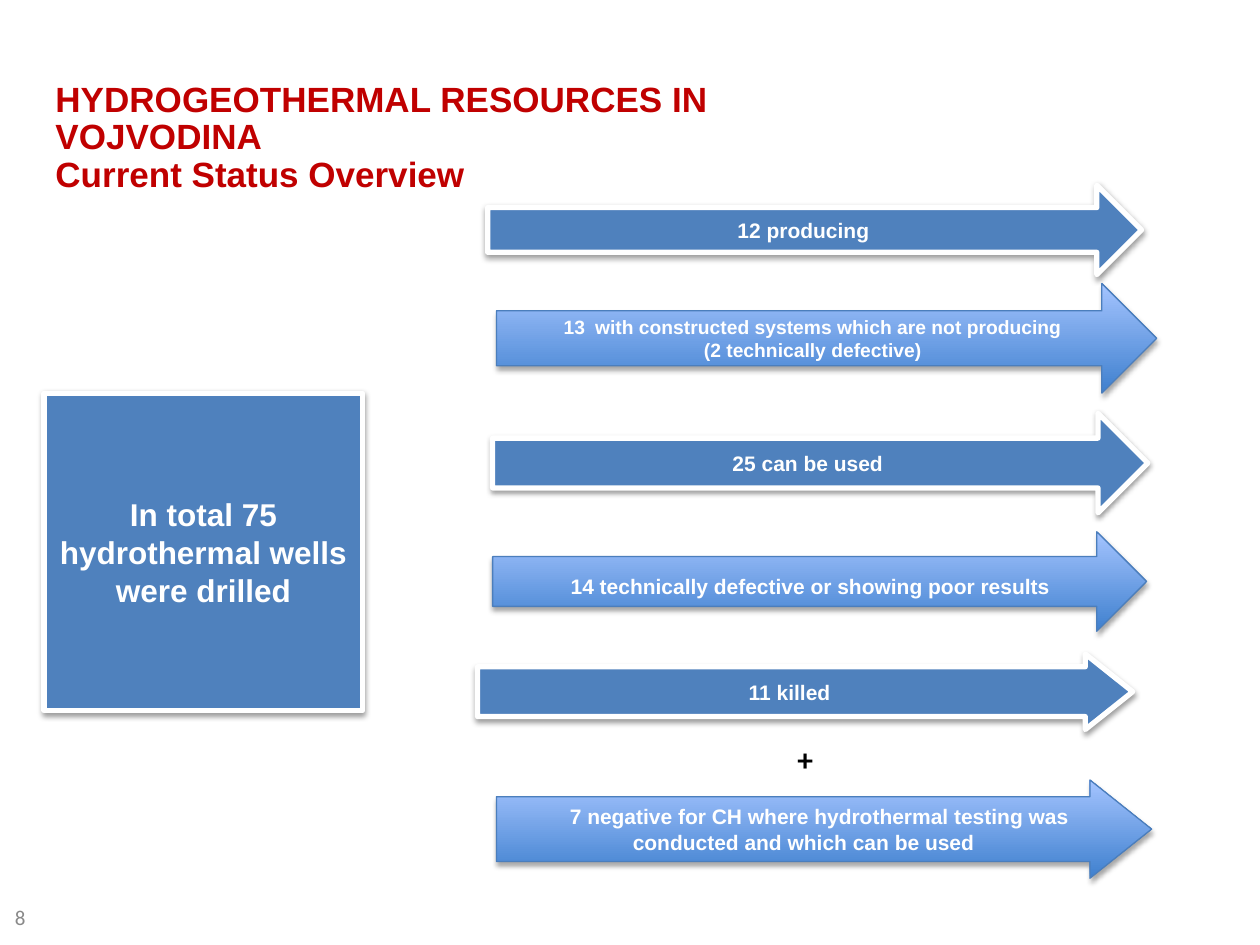
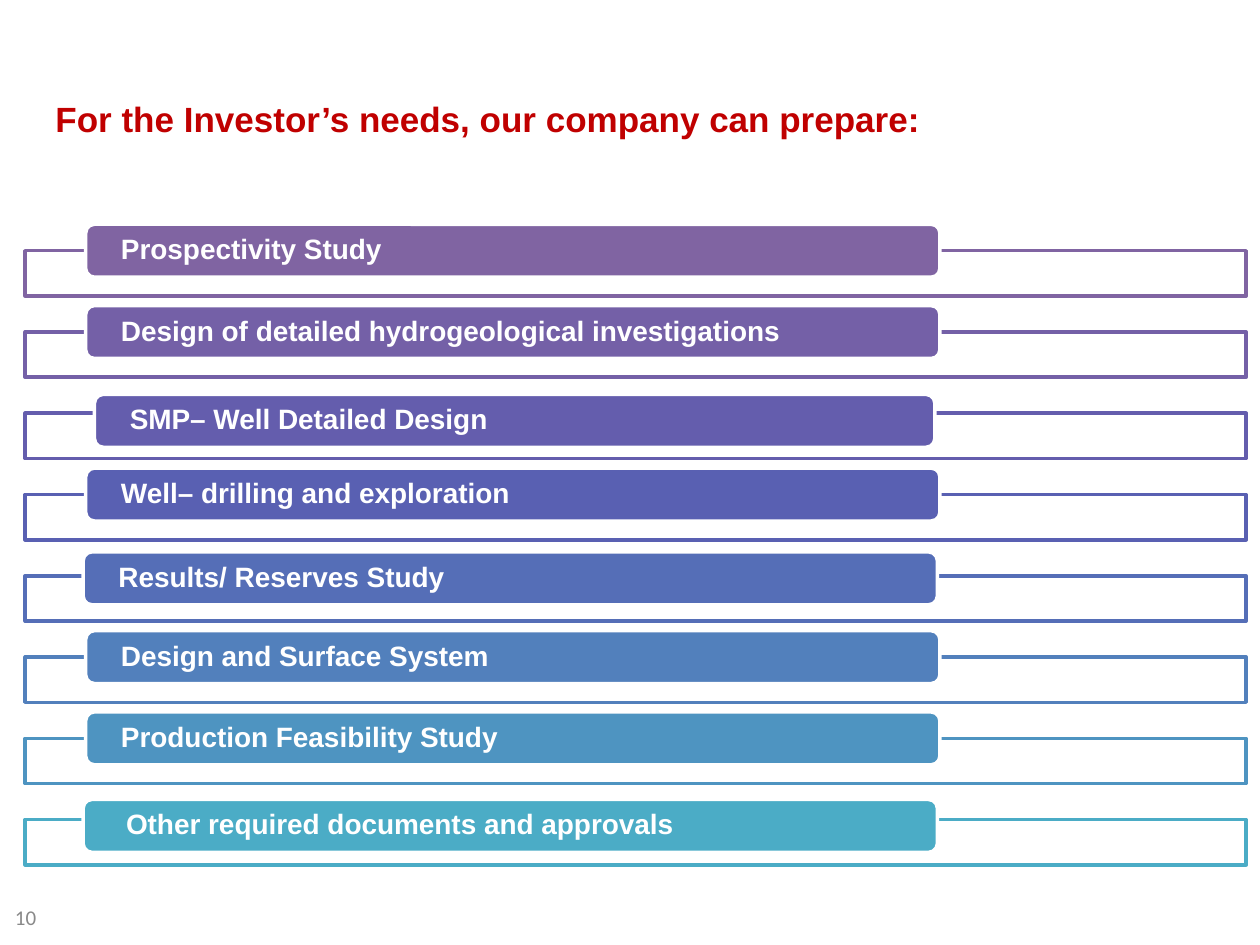
"""Two slides on hydrothermal wells in Vojvodina and the services on offer."""
from copy import deepcopy
from dataclasses import dataclass

from lxml import etree
from pptx import Presentation
from pptx.dml.color import RGBColor
from pptx.enum.shapes import MSO_SHAPE
from pptx.enum.text import MSO_ANCHOR, MSO_AUTO_SIZE, PP_ALIGN
from pptx.oxml.ns import qn
from pptx.util import Inches, Pt

RECT, ROUND, ARROW = MSO_SHAPE.RECTANGLE, MSO_SHAPE.ROUNDED_RECTANGLE, MSO_SHAPE.RIGHT_ARROW
TOP, MIDDLE = MSO_ANCHOR.TOP, MSO_ANCHOR.MIDDLE
LEFT, CENTER = PP_ALIGN.LEFT, PP_ALIGN.CENTER


@dataclass(frozen=True)
class Theme:
    """Colours, fonts and type sizes of both slides."""
    title: str = "C00000"
    white: str = "FFFFFF"
    black: str = "000000"
    number: str = "898989"
    blue: str = "4F81BD"
    edge: str = "4B7EBC"
    gradient: tuple = ("3F80CE", "A4C4FF")
    font: str = "Arial"
    alt_font: str = "Calibri"
    title_size: int = 20
    large: int = 18
    bar_size: int = 16
    small: int = 12
    tiny: int = 11


T = Theme()

WELLS_TITLE = "HYDROGEOTHERMAL RESOURCES IN VOJVODINA\nCurrent Status Overview"
TOTAL = "In total 75 hydrothermal wells were drilled"
POINTED = (0.658, 0.627)
WELL_GROUPS = [
    dict(text="12 producing", at=(3.87, 1.47, 5.19, 0.71)),
    dict(text=["with constructed systems which are not producing", "(2 technically defective)"],
         at=(3.94, 2.25, 5.24, 0.87), size=T.tiny, start=13),
    dict(text="25 can be used", at=(3.91, 3.28, 5.2, 0.79)),
    dict(text="14 technically defective or showing poor results",
         at=(3.91, 4.22, 5.19, 0.79), margins=(0.15, 0.13, 0.1, 0.05)),
    dict(text="11 killed", at=(3.79, 5.19, 5.2, 0.6), adj=POINTED),
    dict(text="7 negative for CH where hydrothermal testing was conducted and which can be used",
         at=(3.94, 6.19, 5.2, 0.78), adj=POINTED, indent=0.25),
]

SERVICES_TITLE = "For the Investor’s needs, our company can prepare:"
SERVICES = [
    dict(text="Prospectivity Study", color="8064A2"),
    dict(text="Design of detailed hydrogeological investigations", color="7460A7"),
    dict(text="SMP– Well Detailed Design", color="645DAD", left=0.75, width=6.67, rise=0.15),
    dict(text="Well– drilling and exploration", color="5960B2"),
    dict(text="Results/ Reserves Study", color="556EB7", left=0.66, rise=0.19),
    dict(text="Design and Surface System", color="5280BC"),
    dict(text="Production Feasibility Study", color="4E94C1"),
    dict(text="Other required documents and approvals", color="4BACC6",
         left=0.66, rise=0.16, indent=0.06),
]
FRAME_TOP, FRAME_STEP = 1.99, 0.645


def write(shape, text, size=T.small, color=T.white, font=T.font, bold=True, align=CENTER,
          anchor=MIDDLE, margins=(0.1, 0.05, 0.1, 0.05), spacing=None, indent=0, start=None):
    """Fill a shape with formatted paragraphs; start numbers the first one."""
    tf = shape.text_frame
    tf.word_wrap = True
    tf.auto_size = MSO_AUTO_SIZE.NONE
    tf.vertical_anchor = anchor
    tf.margin_left, tf.margin_top, tf.margin_right, tf.margin_bottom = map(Inches, margins)
    for i, line in enumerate([text] if isinstance(text, str) else text):
        p = tf.add_paragraph() if i else tf.paragraphs[0]
        p.text = line
        p.alignment = align
        if spacing:
            p.line_spacing = spacing
        pPr = p._p.get_or_add_pPr()
        if indent:
            pPr.set("indent", str(Inches(indent)))
        if start and not i:
            pPr.set("marL", str(Inches(0.25)))
            pPr.set("indent", str(-Inches(0.25)))
            etree.SubElement(pPr, qn("a:buAutoNum"), type="arabicPlain", startAt=str(start))
        for r in p.runs:
            r.font.name, r.font.size, r.font.bold = font, Pt(size), bold
            r.font.color.rgb = RGBColor.from_string(color)
        for br in p._p.findall(qn("a:br")):
            br.insert(0, deepcopy(p.runs[0]._r.rPr))


def add_box(s, kind, at, fill, line=None, weight=0.0, adj=()):
    """Add a preset shape; a pair of fill colours makes a vertical gradient."""
    sp = s.shapes.add_shape(kind, *map(Inches, at))
    sp.shadow.inherit = False
    for i, value in enumerate(adj):
        sp.adjustments[i] = value
    if isinstance(fill, tuple):
        sp.fill.gradient()
        sp.fill.gradient_angle = 90
        for stop, color in zip(sp.fill.gradient_stops, fill):
            stop.color.rgb = RGBColor.from_string(color)
    else:
        sp.fill.solid()
        sp.fill.fore_color.rgb = RGBColor.from_string(fill)
    if line:
        sp.line.color.rgb = RGBColor.from_string(line)
        sp.line.width = Pt(weight)
    else:
        sp.line.fill.background()
    return sp


def add_shadow(sp, distance, alpha):
    """Give a shape a soft shadow straight below it."""
    effects = sp._element.spPr.find(qn("a:effectLst"))
    shadow = etree.SubElement(effects, qn("a:outerShdw"), blurRad=str(Pt(3.1)),
                              dist=str(Pt(distance)), dir="5400000", rotWithShape="0")
    color = etree.SubElement(shadow, qn("a:srgbClr"), val=T.black)
    etree.SubElement(color, qn("a:alpha"), val=str(alpha * 1000))


def add_panel(s, kind, at, glossy=False, adj=()):
    """Add a shadowed shape, glossy with a gradient or flat with a white edge."""
    if glossy:
        sp = add_box(s, kind, at, T.gradient, T.edge, 0.75, adj)
        add_shadow(sp, 1.8, 35)
    else:
        sp = add_box(s, kind, at, T.blue, T.white, 3, adj)
        add_shadow(sp, 1.6, 38)
    return sp


def add_slide(prs, title, top, height, number):
    """Add a slide with its title and page number."""
    s = prs.slides.add_slide(prs.slide_layouts[5])
    sp = s.shapes.title
    sp.left, sp.top, sp.width, sp.height = map(Inches, (0.34, top, 7.09, height))
    write(sp, title, size=T.title_size, color=T.title, align=LEFT, anchor=TOP, spacing=0.9)
    box = s.shapes.add_textbox(*map(Inches, (0.02, 7.08, 2.33, 0.4)))
    write(box, str(number), color=T.number, font=T.alt_font, bold=False, align=LEFT)
    return s


def build_wells(prs):
    """Show the total of wells and the arrows with their status."""
    s = add_slide(prs, WELLS_TITLE, 0.6, 0.79, 8)
    write(add_panel(s, RECT, (0.35, 3.12, 2.53, 2.52)), TOTAL, size=T.large)
    for i, group in enumerate(WELL_GROUPS):
        style = dict(group)
        text, at, adj = style.pop("text"), style.pop("at"), style.pop("adj", ())
        write(add_panel(s, ARROW, at, i % 2 == 1, adj), text, **style)
    plus = add_box(s, RECT, (6.08, 5.94, 0.62, 0.16), T.white)
    write(plus, "+", size=T.large, color=T.black, font=T.alt_font)


def build_services(prs):
    """Show each service as a bar over its frame."""
    s = add_slide(prs, SERVICES_TITLE, 0.76, 0.47, 10)
    for i, service in enumerate(SERVICES):
        top, color = FRAME_TOP + i * FRAME_STEP, service["color"]
        add_box(s, RECT, (0.2, top, 9.69, 0.36), T.white, color, 2)
        at = (service.get("left", 0.68), top - service.get("rise", 0.21),
              service.get("width", 6.78), 0.42)
        bar = add_box(s, ROUND, at, color, T.white, 2)
        write(bar, service["text"], size=T.bar_size, align=LEFT, spacing=0.9,
              margins=(0.26, 0, 0.26, 0), indent=service.get("indent", 0))


def main():
    """Build and save the presentation."""
    prs = Presentation()
    prs.slide_width, prs.slide_height = Inches(10), Inches(7.5)
    build_wells(prs)
    build_services(prs)
    prs.save("out.pptx")


if __name__ == "__main__":
    main()
